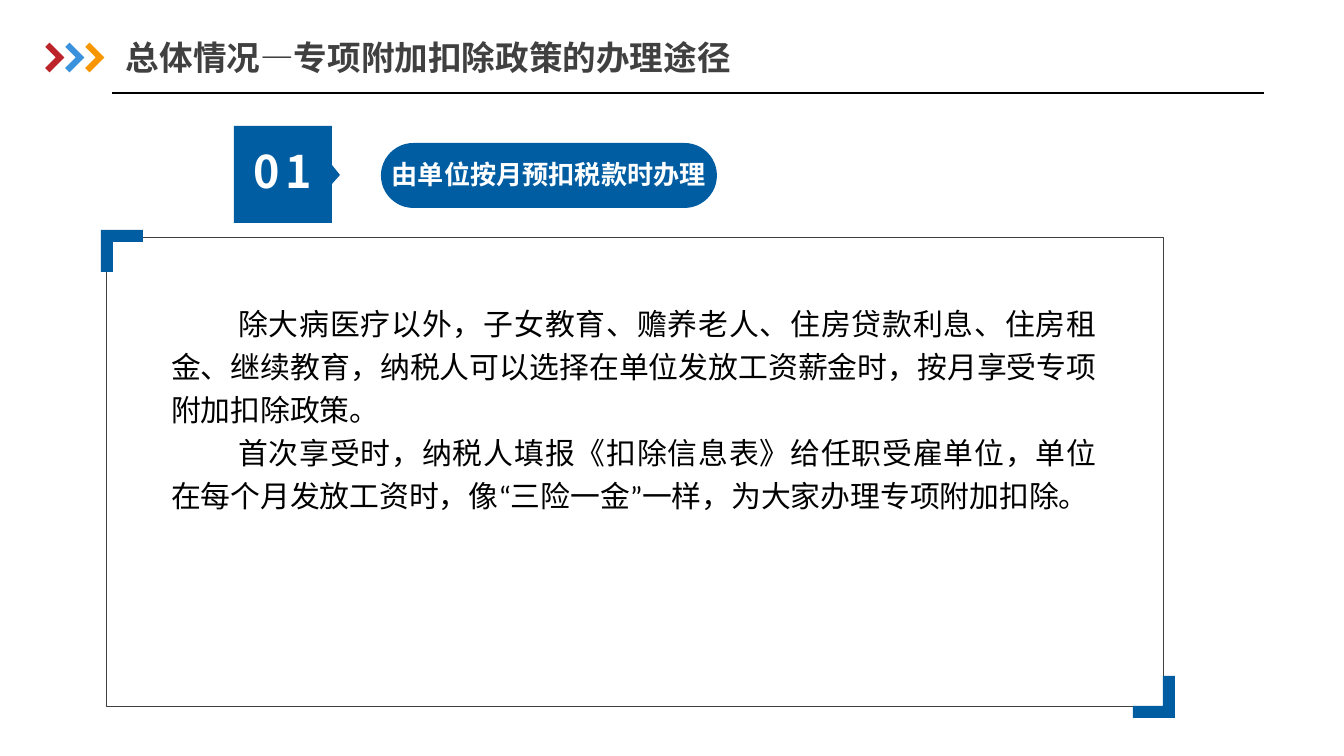
from lxml.etree import SubElement
from pptx import Presentation
from pptx.dml.color import RGBColor
from pptx.enum.shapes import MSO_CONNECTOR, MSO_SHAPE
from pptx.enum.text import MSO_ANCHOR, PP_ALIGN
from pptx.oxml.ns import qn
from pptx.util import Pt

# Content
TITLE = "总体情况—专项附加扣除政策的办理途径"
NUMBER = "01"
HEADING = "由单位按月预扣税款时办理"
BODY = [
    "除大病医疗以外，子女教育、赡养老人、住房贷款利息、住房租金、继续教育，"
    "纳税人可以选择在单位发放工资薪金时，按月享受专项附加扣除政策。",
    "首次享受时，纳税人填报《扣除信息表》给任职受雇单位，"
    "单位在每个月发放工资时，像“三险一金”一样，为大家办理专项附加扣除。",
]
CHEVRON_COLOURS = ["BC242A", "3992DB", "F79600"]
BLUE, GREY, WHITE, BLACK = "005DA2", "404040", "FFFFFF", "000000"
SANS, BODY_FONT = "Noto Sans CJK SC", "Calibri"

# Outlines in px
NUMBER_TAG = [(234, 126), (332, 126), (332, 165), (340, 175),
              (332, 184), (332, 223), (234, 223)]
BRACKET = [(0, 0), (42, 0), (42, 12), (12, 12), (12, 42), (0, 42)]
BRACKET_CORNERS = [(101, 230, 1), (1175, 718, -1)]  # x, y, direction


def px(value):
    return round(value * 914400 / 134.4)


def colour(text):
    return RGBColor.from_string(text)


def paint(shape, fill=None, line=None, width=0.25):
    shape.shadow.inherit = False
    if fill:
        shape.fill.solid()
        shape.fill.fore_color.rgb = colour(fill)
    else:
        shape.fill.background()
    if line:
        shape.line.color.rgb = colour(line)
        shape.line.width = Pt(width)
    else:
        shape.line.fill.background()


def add_shape(kind, place, adjustments, **look):
    shape = page.shapes.add_shape(kind, *map(px, place))
    for index, value in enumerate(adjustments):
        shape.adjustments[index] = value
    paint(shape, **look)
    return shape


def add_outline(points):
    points = [(px(x), px(y)) for x, y in points]
    builder = page.shapes.build_freeform(*points[0], scale=1.0)
    builder.add_line_segments(points[1:], close=True)
    paint(builder.convert_to_shape(), fill=BLUE)


def write(box, place, texts, size, font, ink, bold=False, align=PP_ALIGN.LEFT,
          anchor=MSO_ANCHOR.TOP, leading=None, indent=0, tracking=0, inset=0):
    box.left, box.top, box.width, box.height = map(px, place)
    frame = box.text_frame
    frame.word_wrap = True
    frame.vertical_anchor = anchor
    frame.margin_left = frame.margin_right = 0
    frame.margin_top = frame.margin_bottom = px(inset)
    for index, text in enumerate(texts):
        para = frame.add_paragraph() if index else frame.paragraphs[0]
        para.alignment = align
        para.space_before = Pt(0)
        if leading:
            para.line_spacing = leading
        if indent:
            properties = para._p.get_or_add_pPr()
            properties.set("marL", "0")
            properties.set("indent", str(px(indent)))
        span = para.add_run()
        span.text = text
        span.font.name = font
        span.font.size = Pt(size)
        span.font.bold = bold
        span.font.color.rgb = colour(ink)
        run_properties = span._r.get_or_add_rPr()
        SubElement(run_properties, qn("a:ea")).set("typeface", font)
        if tracking:
            run_properties.set("spc", str(tracking * 100))


def add_text(*details, **look):
    write(page.shapes.add_textbox(0, 0, 0, 0), *details, **look)


deck = Presentation()
deck.slide_width, deck.slide_height = px(1344), px(756)
page = deck.slides.add_slide(deck.slide_layouts[5])

# Title, rule and chevrons
write(page.shapes.title, (126, 30, 694, 55), [TITLE], 18, SANS, GREY,
      bold=True, anchor=MSO_ANCHOR.MIDDLE, inset=7)
rule = page.shapes.add_connector(MSO_CONNECTOR.STRAIGHT,
                                 px(112), px(93), px(1264), px(93))
rule.line.color.rgb = colour(BLACK)
rule.line.width = Pt(0.75)
SubElement(rule._element.spPr, qn("a:effectLst"))
for index, fill in enumerate(CHEVRON_COLOURS):
    chevron = add_shape(MSO_SHAPE.CORNER, (39 + 20 * index, 47, 21, 21),
                        [0.28, 0.29], fill=fill)
    chevron.rotation = 225

# Heading pill
add_shape(MSO_SHAPE.ROUNDED_RECTANGLE, (381, 143, 336, 65), [0.5], fill=BLUE)
add_text((349, 153, 400, 46), [HEADING], 14, SANS, WHITE, bold=True,
         align=PP_ALIGN.CENTER, anchor=MSO_ANCHOR.MIDDLE, leading=0.9)

# Framed body text with corner brackets
add_shape(MSO_SHAPE.ROUNDED_RECTANGLE, (106, 237, 1057, 469), [0], line=GREY)
add_text((171, 299, 927, 304), BODY, 16, BODY_FONT, BLACK,
         align=PP_ALIGN.JUSTIFY, leading=1.2, indent=67)
for x, y, direction in BRACKET_CORNERS:
    add_outline([(x + direction * dx, y + direction * dy) for dx, dy in BRACKET])

# Number tag
add_outline(NUMBER_TAG)
add_text((245, 144, 76, 54), [NUMBER], 24, SANS, WHITE, bold=True,
         align=PP_ALIGN.CENTER, tracking=3)

deck.save("out.pptx")
